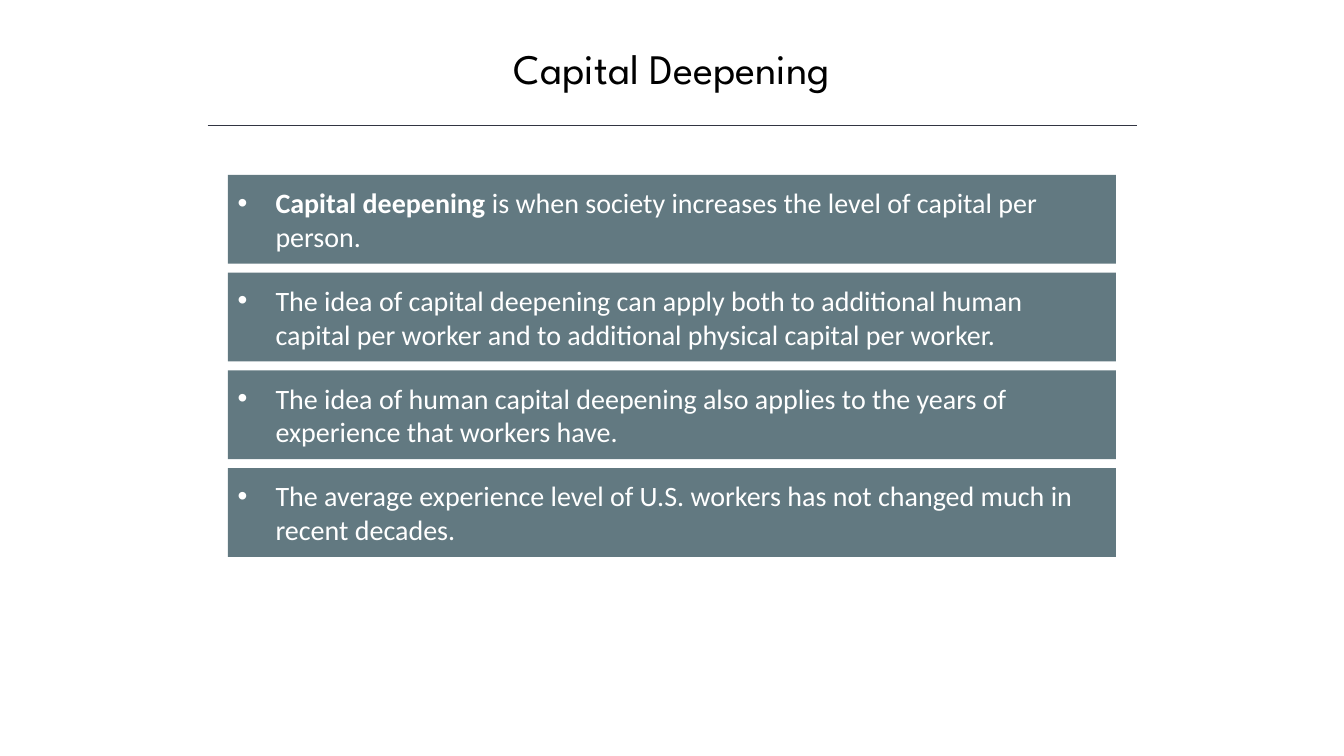
"""Build the Capital Deepening slide: a ruled title above four bulleted panels."""
from dataclasses import dataclass

from lxml import etree
from pptx import Presentation
from pptx.dml.color import RGBColor
from pptx.enum.shapes import MSO_CONNECTOR, MSO_SHAPE
from pptx.enum.text import MSO_ANCHOR, PP_ALIGN
from pptx.oxml.ns import qn
from pptx.slide import Slide
from pptx.text.text import _Run
from pptx.util import Pt

STRAIGHT = MSO_CONNECTOR.STRAIGHT
RECT = MSO_SHAPE.RECTANGLE
MIDDLE = MSO_ANCHOR.MIDDLE
LEFT, CENTER = PP_ALIGN.LEFT, PP_ALIGN.CENTER


@dataclass(frozen=True)
class Theme:
    ink: RGBColor = RGBColor(0x00, 0x00, 0x00)
    rule: RGBColor = RGBColor(0x32, 0x35, 0x42)
    panel: RGBColor = RGBColor(0x62, 0x79, 0x81)
    light: RGBColor = RGBColor(0xFF, 0xFF, 0xFF)
    head_font: str = "League Spartan"
    body_font: str = "Calibri"
    head_size: float = 30
    body_size: float = 20


@dataclass(frozen=True)
class Box:
    left: float
    top: float
    width: float
    height: float

    def lengths(self) -> tuple[Pt, Pt, Pt, Pt]:
        return Pt(self.left), Pt(self.top), Pt(self.width), Pt(self.height)


@dataclass(frozen=True)
class Point:
    text: str
    lead: str = ""


THEME = Theme()
TITLE = Box(120, 26.64, 720, 43.92)
RULE = Box(148.32, 89.5, 663.84, 0)
PANEL = Box(162.72, 124.9, 634.32, 63.36)
STEP = 69.84
INDENT = 27
RIGHT_INSET = 26

POINTS = (
    Point("is when society increases the level of capital per person.",
          lead="Capital deepening "),
    Point("The idea of capital deepening can apply both to additional human "
          "capital per worker and to additional physical capital per worker."),
    Point("The idea of human capital deepening also applies to the years of "
          "experience that workers have."),
    Point("The average experience level of U.S. workers has not changed much "
          "in recent decades."),
)


def style(run: _Run, face: str, size: float, color: RGBColor) -> None:
    run.font.name = face
    run.font.size = Pt(size)
    run.font.color.rgb = color


def draw_title(slide: Slide, text: str) -> None:
    frame = slide.shapes.add_textbox(*TITLE.lengths()).text_frame
    frame.word_wrap = True
    frame.text = text
    para = frame.paragraphs[0]
    para.alignment = CENTER
    style(para.runs[0], THEME.head_font, THEME.head_size, THEME.ink)


def draw_rule(slide: Slide) -> None:
    left, top, width, height = RULE.lengths()
    rule = slide.shapes.add_connector(STRAIGHT, left, top, left + width, top + height)
    rule.line.color.rgb = THEME.rule
    rule.line.width = Pt(1)
    etree.SubElement(rule._element.spPr, qn("a:effectLst"))


def draw_point(slide: Slide, point: Point, box: Box) -> None:
    panel = slide.shapes.add_shape(RECT, *box.lengths())
    panel.shadow.inherit = False
    panel.fill.solid()
    panel.fill.fore_color.rgb = THEME.panel
    panel.line.fill.background()

    frame = panel.text_frame
    frame.word_wrap = True
    frame.vertical_anchor = MIDDLE
    frame.margin_right = Pt(RIGHT_INSET)

    para = frame.paragraphs[0]
    para.text = point.lead
    para.add_run().text = point.text
    para.alignment = LEFT
    props = para._p.get_or_add_pPr()
    props.set("marL", str(Pt(INDENT)))
    props.set("indent", str(-Pt(INDENT)))
    etree.SubElement(props, qn("a:buFont"), typeface="Arial")
    etree.SubElement(props, qn("a:buChar"), char="•")
    for run in para.runs:
        style(run, THEME.body_font, THEME.body_size, THEME.light)
        run.font.bold = run.text == point.lead


def main() -> None:
    deck = Presentation()
    deck.slide_width, deck.slide_height = Pt(960), Pt(540)
    slide = deck.slides.add_slide(deck.slide_layouts[6])
    draw_rule(slide)
    draw_title(slide, "Capital Deepening")
    for row, point in enumerate(POINTS):
        top = PANEL.top + row * STEP
        draw_point(slide, point, Box(PANEL.left, top, PANEL.width, PANEL.height))
    deck.save("out.pptx")


if __name__ == "__main__":
    main()
